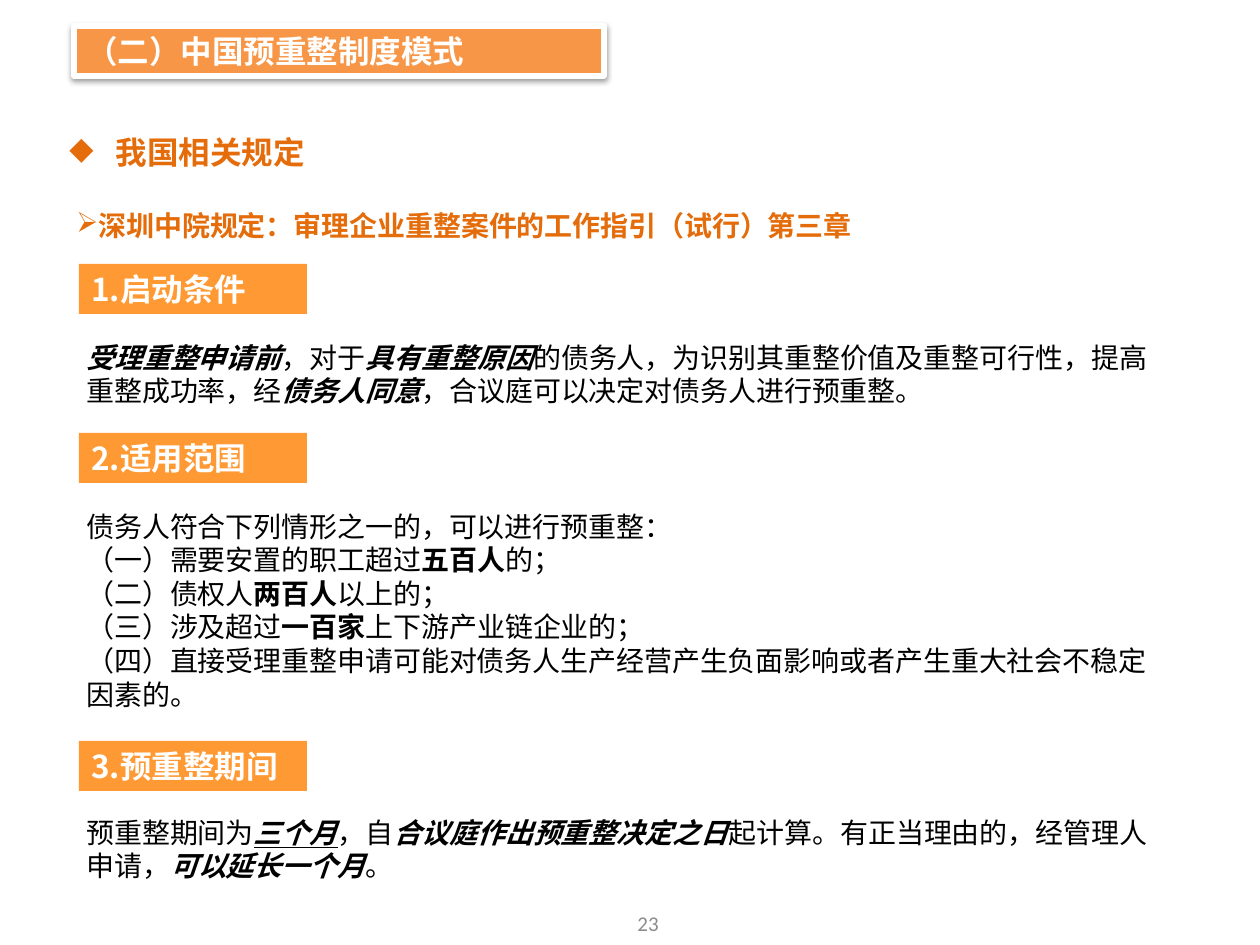
from lxml import etree
from pptx import Presentation, util as u
from pptx.dml.color import RGBColor
from pptx.enum import shapes, text
from pptx.oxml import parse_xml
from pptx.oxml.ns import qn

PX = 914400 / 126
SANS = "Noto Sans CJK SC"
WHITE = RGBColor(0xFF, 0xFF, 0xFF)
BLACK = RGBColor(0, 0, 0)
GRAY = RGBColor(0x8C, 0x8C, 0x8C)
ORANGE = RGBColor(0xF7, 0x96, 0x46)
AMBER = RGBColor(0xFF, 0x99, 0x33)
RUST = RGBColor(0xE4, 0x6C, 0x0A)
SHADOW = """<a:effectLst xmlns:a="http://schemas.openxmlformats.org/drawingml/2006/main">
<a:outerShdw blurRad="40000" dist="20000" dir="5400000" rotWithShape="0">
<a:srgbClr val="000000"><a:alpha val="38000"/></a:srgbClr></a:outerShdw></a:effectLst>"""

deck = Presentation()
deck.slide_width, deck.slide_height = u.Inches(10), u.Inches(7.5)
slide = deck.slides.add_slide(deck.slide_layouts[6])


def scale(*sizes):
    return [u.Emu(round(n * PX)) for n in sizes]


def write(shape, paras, size, color, lead, font=SANS, bullet=None, hang=0):
    """Fill a shape with paragraphs of (text, style) runs; style letters are b, i, u."""
    frame = shape.text_frame
    frame.word_wrap = True
    frame.vertical_anchor = text.MSO_ANCHOR.TOP
    for n, runs in enumerate(paras):
        para = frame.add_paragraph() if n else frame.paragraphs[0]
        para.alignment = text.PP_ALIGN.LEFT
        para.line_spacing = u.Pt(lead)
        if bullet:
            props = para._p.get_or_add_pPr()
            props.set("marL", str(round(hang * PX)))
            props.set("indent", str(round(-hang * PX)))
            etree.SubElement(props, qn("a:buChar")).set("char", bullet)
        for words, style in runs:
            run = para.add_run()
            run.text = words
            face = run.font
            face.name, face.size = font, u.Pt(size)
            face.color.rgb = color
            face.bold = "b" in style
            face.italic = "i" in style
            face.underline = "u" in style
            etree.SubElement(run._r.rPr, qn("a:ea")).set("typeface", font)


# Title bar and section bars
bars = [
    (74, 26, 530, "（二）中国预重整制度模式", ORANGE),
    (79, 264, 228, "1.启动条件", AMBER),
    (79, 433, 228, "2.适用范围", AMBER),
    (79, 741, 228, "3.预重整期间", AMBER),
]
for left, top, wide, label, fill in bars:
    bar = slide.shapes.add_shape(shapes.MSO_SHAPE.RECTANGLE, *scale(left, top, wide, 50))
    bar.fill.solid()
    bar.fill.fore_color.rgb = fill
    if fill == ORANGE:
        bar.line.color.rgb = WHITE
        bar.line.width = u.Pt(3)
        bar._element.spPr.append(parse_xml(SHADOW))
    else:
        bar.line.fill.background()
        bar.shadow.inherit = False
    write(bar, [[(label, "b")]], 18, WHITE, 21.6)

# Bulleted headings
head = slide.shapes.add_textbox(*scale(57, 86, 533, 78))
write(head, [[(" 我国相关规定", "b")]], 18, RUST, 45, bullet="◆", hang=39)
rule = slide.shapes.add_textbox(*scale(64, 183, 834, 55))
write(rule, [[("深圳中院规定：审理企业重整案件的工作指引（试行）第三章", "b")]],
      16, RUST, 30.5, bullet="➢")

# Section texts
start = [[
    ("受理重整申请前", "bi"), ("，对于", ""), ("具有重整原因", "bi"),
    ("的债务人，为识别其重整价值及重整可行性，提高重整成功率，经", ""),
    ("债务人同意", "bi"), ("，合议庭可以决定对债务人进行预重整。", ""),
]]
scope = [
    [("债务人符合下列情形之一的，可以进行预重整：", "")],
    [("（一）需要安置的职工超过", ""), ("五百人", "b"), ("的；", "")],
    [("（二）债权人", ""), ("两百人", "b"), ("以上的；", "")],
    [("（三）涉及超过", ""), ("一百家", "b"), ("上下游产业链企业的；", "")],
    [("（四）直接受理重整申请可能对债务人生产经营产生负面影响或者产生重大社会不稳定因素的。", "")],
]
term = [[
    ("预重整期间为", ""), ("三个月", "biu"), ("，自", ""),
    ("合议庭作出预重整决定之日", "bi"),
    ("起计算。有正当理由的，经管理人申请，", ""),
    ("可以延长一个月", "bi"), ("。", ""),
]]
for top, wide, high, paras in [(334, 1101, 81, start), (503, 1091, 217, scope),
                               (809, 1091, 81, term)]:
    box = slide.shapes.add_textbox(*scale(74, top, wide, high))
    write(box, paras, 16, BLACK, 19.2)

# Page number
page = slide.shapes.add_textbox(*scale(501, 898, 294, 50))
write(page, [[("23", "")]], 12, GRAY, 14.4, font="Calibri")
page.text_frame.vertical_anchor = text.MSO_ANCHOR.MIDDLE
page.text_frame.paragraphs[0].alignment = text.PP_ALIGN.CENTER

deck.save("out.pptx")
